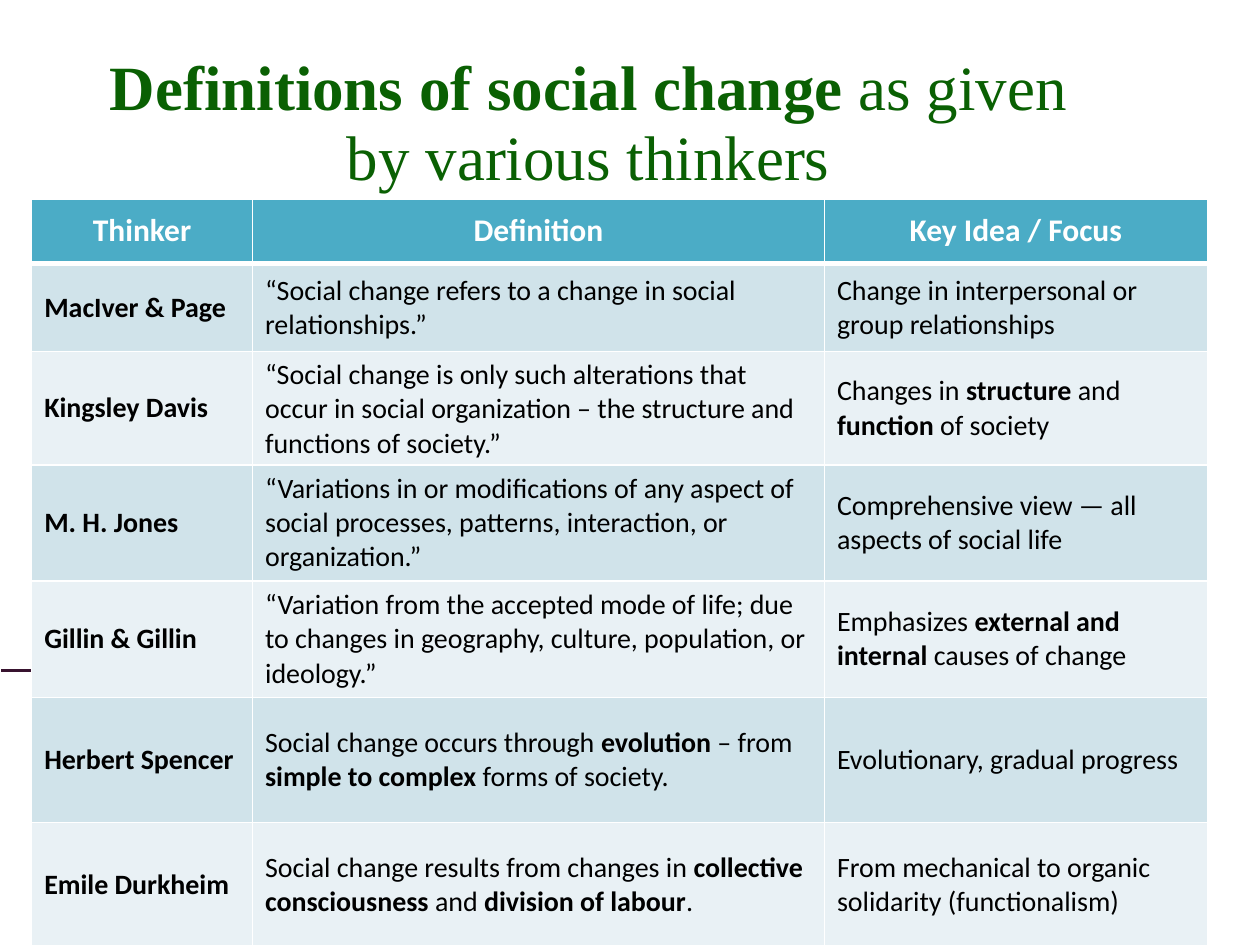
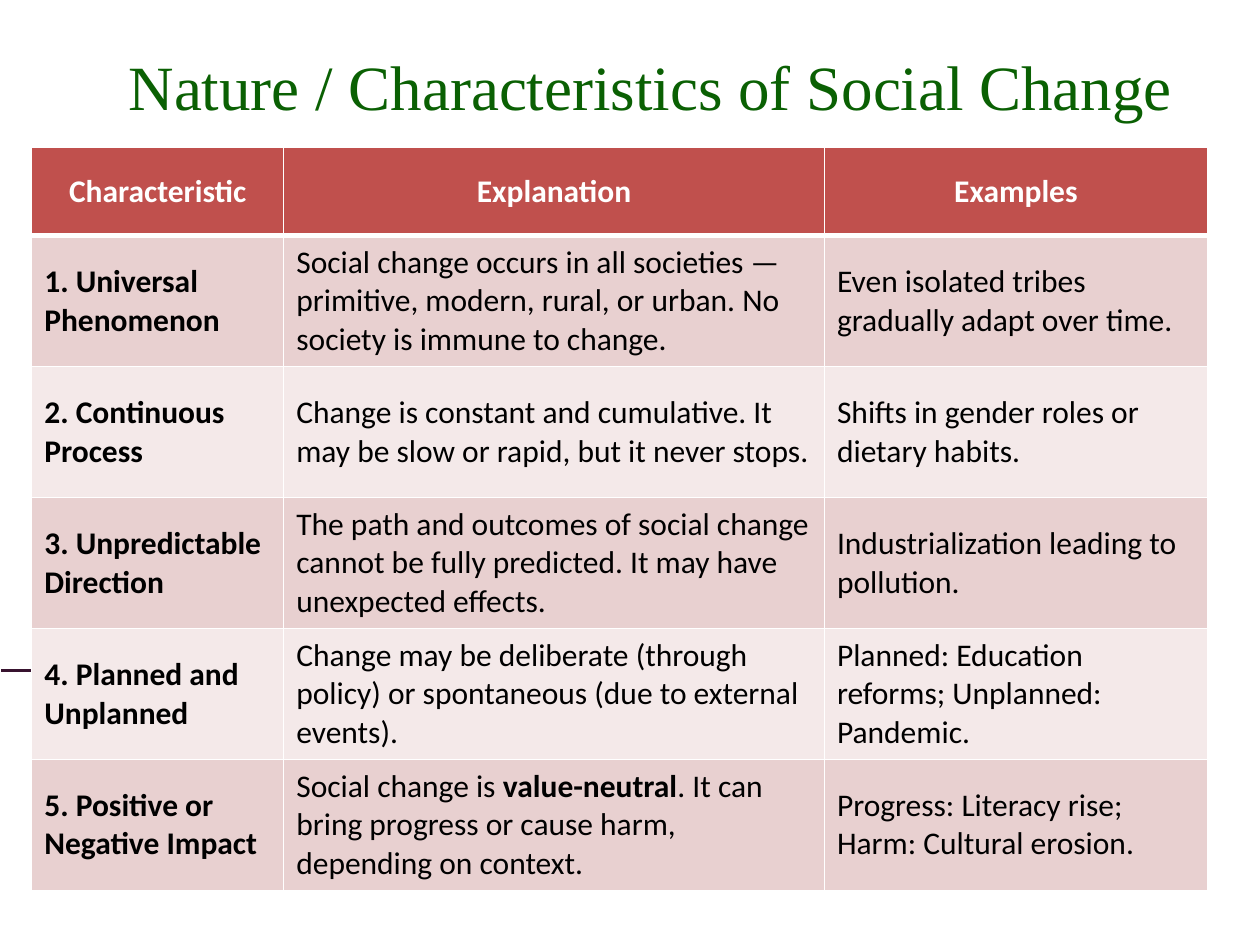
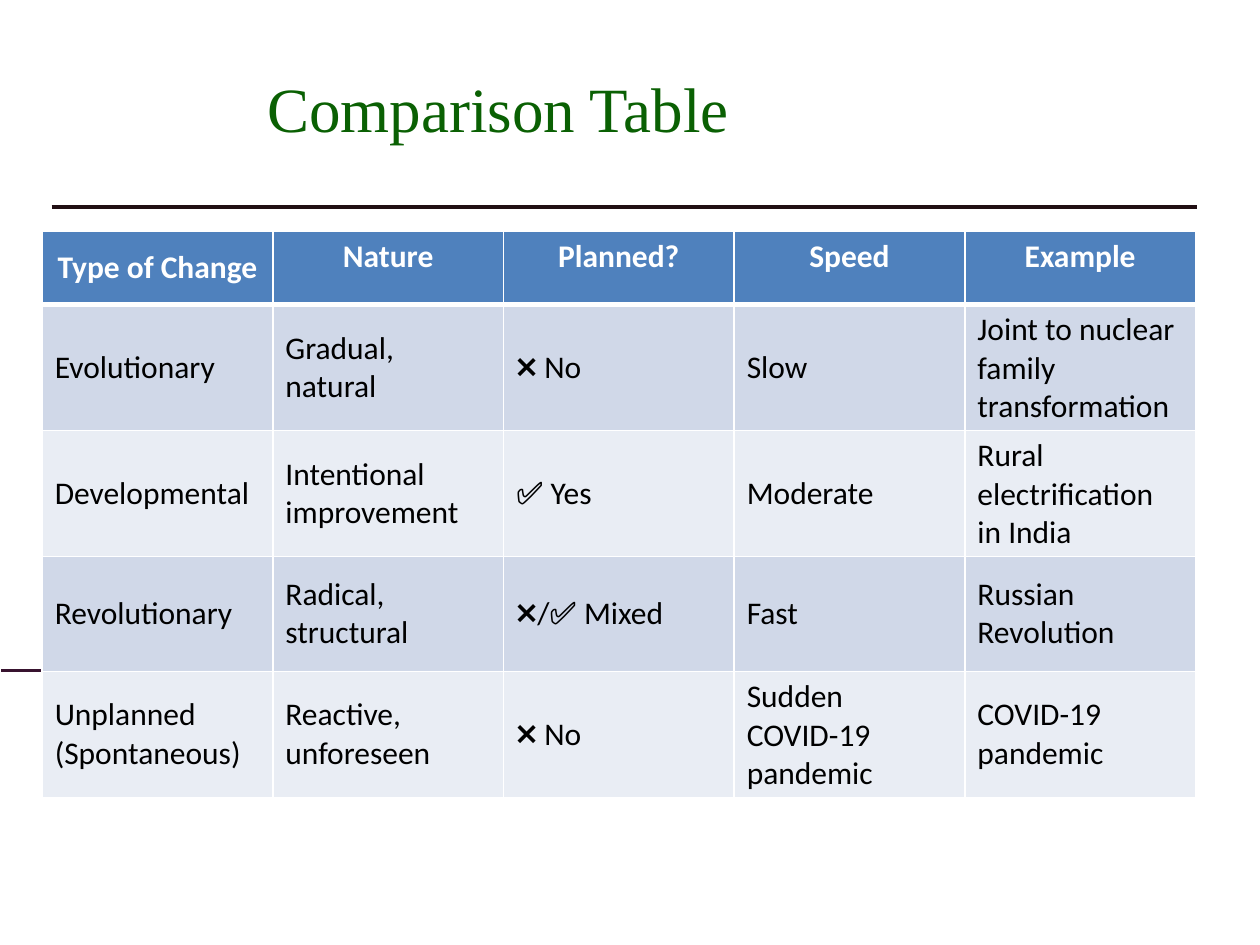
from lxml.etree import SubElement
from pptx import Presentation
from pptx.dml.color import RGBColor
from pptx.enum.shapes import MSO_CONNECTOR
from pptx.enum.text import MSO_ANCHOR, PP_ALIGN
from pptx.oxml import parse_xml
from pptx.oxml.ns import nsdecls, qn
from pptx.util import Cm, Pt

GREEN = RGBColor(0x0A, 0x60, 0x03)
PLUM = RGBColor(0x38, 0x13, 0x2F)
DARK = RGBColor(0x21, 0x0F, 0x13)
WHITE = RGBColor(0xFF, 0xFF, 0xFF)
BLACK = RGBColor(0, 0, 0)
TEAL = (RGBColor(0x4B, 0xAC, 0xC6), RGBColor(0xD0, 0xE3, 0xEA), RGBColor(0xE9, 0xF1, 0xF5))
RED = (RGBColor(0xC0, 0x50, 0x4D), RGBColor(0xE8, 0xD0, 0xD0), RGBColor(0xF4, 0xE9, 0xE9))
BLUE = (RGBColor(0x4F, 0x81, 0xBD), RGBColor(0xD0, 0xD8, 0xE8), RGBColor(0xE9, 0xED, 0xF4))

THINKERS = [
    ["Thinker", "Definition", "Key Idea / Focus"],
    ["**MacIver & Page**",
     "“Social change refers to a change in social relationships.”",
     "Change in interpersonal or group relationships"],
    ["**Kingsley Davis**",
     "“Social change is only such alterations that occur in social organization"
     " – the structure and functions of society.”",
     "Changes in **structure** and **function** of society"],
    ["**M. H. Jones**",
     "“Variations in or modifications of any aspect of social processes,"
     " patterns, interaction, or organization.”",
     "Comprehensive view — all aspects of social life"],
    ["**Gillin & Gillin**",
     "“Variation from the accepted mode of life; due to changes in geography,"
     " culture, population, or ideology.”",
     "Emphasizes **external and internal** causes of change"],
    ["**Herbert Spencer**",
     "Social change occurs through **evolution** – from **simple to complex**"
     " forms of society.",
     "Evolutionary, gradual progress"],
    ["**Emile Durkheim**",
     "Social change results from changes in **collective consciousness** and"
     " **division of labour**.",
     "From mechanical to organic solidarity (functionalism)"],
]
TRAITS = [
    ["Characteristic", "Explanation", "Examples"],
    ["**1. Universal Phenomenon**",
     "Social change occurs in all societies — primitive, modern, rural, or urban."
     " No society is immune to change.",
     "Even isolated tribes gradually adapt over time."],
    ["**2. Continuous Process**",
     "Change is constant and cumulative. It may be slow or rapid, but it never stops.",
     "Shifts in gender roles or dietary habits."],
    ["**3. Unpredictable Direction**",
     "The path and outcomes of social change cannot be fully predicted."
     " It may have unexpected effects.",
     "Industrialization leading to pollution."],
    ["**4. Planned and Unplanned**",
     "Change may be deliberate (through policy) or spontaneous (due to external events).",
     "Planned: Education reforms; Unplanned: Pandemic."],
    ["**5. Positive or Negative Impact**",
     "Social change is **value-neutral**. It can bring progress or cause harm,"
     " depending on context.",
     "Progress: Literacy rise; Harm: Cultural erosion."],
]
TYPES = [
    ["Type of Change", "Nature", "Planned?", "Speed", "Example"],
    ["Evolutionary", "Gradual, natural", "❌ No", "Slow",
     "Joint to nuclear family transformation"],
    ["Developmental", "Intentional improvement", "✅ Yes", "Moderate",
     "Rural electrification in India"],
    ["Revolutionary", "Radical, structural", "❌/✅ Mixed", "Fast", "Russian Revolution"],
    ["Unplanned (Spontaneous)", "Reactive, unforeseen", "❌ No",
     "Sudden\tCOVID-19 pandemic", "COVID-19 pandemic"],
]


def fill_text(para, text, size, face, color, bold=False):
    """Write text into a paragraph, with **marked** parts in bold."""
    font = para.font
    font.size, font.name, font.bold = Pt(size), face, bold
    font.color.rgb = color
    for i, part in enumerate(text.split("**")):
        if part:
            run = para.add_run()
            run.text = part
            if i % 2:
                run.font.bold = True


def add_rule(slide, left, top, width, color, weight):
    """Draw a level line."""
    line = slide.shapes.add_connector(
        MSO_CONNECTOR.STRAIGHT, Cm(left), Cm(top), Cm(left + width), Cm(top))
    line.line.color.rgb = color
    line.line.width = Pt(weight)
    SubElement(line._element.spPr, qn("a:effectLst"))


def add_title(slide, box, text, inset=(0, 0.05), align=PP_ALIGN.CENTER):
    """Place the green title in its box."""
    frame = slide.shapes.add_textbox(*map(Cm, box)).text_frame
    frame.word_wrap = True
    frame.margin_left, frame.margin_top = map(Cm, inset)
    frame.margin_right = frame.margin_bottom = 0
    para = frame.paragraphs[0]
    para.alignment = align
    para.line_spacing = Pt(39.6)
    fill_text(para, text, 36, "Times New Roman", GREEN)


def add_edges(cell, base):
    """Give a cell white edges, with its own weight at the base."""
    props = cell._tc.get_or_add_tcPr()
    for i, (side, weight) in enumerate((("lnL", 1), ("lnR", 1), ("lnB", base))):
        props.insert(i, parse_xml(
            f'<a:{side} {nsdecls("a")} w="{Pt(weight)}"><a:solidFill>'
            f'<a:srgbClr val="{WHITE}"/></a:solidFill></a:{side}>'))


def add_grid(slide, left, top, widths, heights, rows, hues, size=18,
             head=MSO_ANCHOR.MIDDLE):
    """Build a banded table with a coloured head row."""
    grid = slide.shapes.add_table(
        len(rows), len(widths), Cm(left), Cm(top),
        Cm(sum(widths)), Cm(sum(heights))).table
    grid.first_row = grid.horz_banding = False
    for col, width in zip(grid.columns, widths):
        col.width = Cm(width)
    for r, (row, height) in enumerate(zip(rows, heights)):
        grid.rows[r].height = Cm(height)
        for c, text in enumerate(row):
            cell = grid.cell(r, c)
            cell.vertical_anchor = MSO_ANCHOR.MIDDLE if r or not c else head
            cell.fill.solid()
            cell.fill.fore_color.rgb = hues[2 - r % 2 if r else 0]
            add_edges(cell, 1 if r else 3)
            para = cell.text_frame.paragraphs[0]
            if r:
                fill_text(para, text, size, "Calibri", BLACK)
            else:
                para.alignment = PP_ALIGN.CENTER
                fill_text(para, text, 18, "Calibri", WHITE, True)


def add_page(deck):
    """Add a blank slide with the tick at its left edge."""
    slide = deck.slides.add_slide(deck.slide_layouts[6])
    add_rule(slide, 0.03, 13.51, 1.67, PLUM, 1.64)
    return slide


def show_thinkers(deck):
    """Build the slide of definitions."""
    slide = add_page(deck)
    add_title(slide, (2.11, 1.04, 19.5, 2.9),
              "**Definitions of social change** as given by various thinkers")
    add_grid(slide, 0.64, 4.01, [4.45, 11.53, 7.72],
             [1.3, 1.78, 1.63, 2.34, 2.34, 2.52, 2.52], THINKERS, TEAL, 16)


def show_traits(deck):
    """Build the slide of characteristics."""
    slide = add_page(deck)
    add_title(slide, (2.11, 1.04, 22.02, 1.47),
              "Nature / Characteristics of Social Change")
    add_grid(slide, 0.64, 2.97, [5.08, 10.9, 7.72], [1.78] + [2.64] * 5, TRAITS, RED)


def show_types(deck):
    """Build the slide that compares types of change."""
    slide = add_page(deck)
    add_rule(slide, 1.04, 4.17, 23.09, DARK, 2.11)
    add_title(slide, (2.9, 0.2, 20.75, 2.9), "Comparison Table",
              (2.49, 1.32), PP_ALIGN.LEFT)
    add_grid(slide, 0.85, 4.66, [4.65] * 5, [1.48] + [2.31] * 4, TYPES, BLUE,
             head=MSO_ANCHOR.TOP)


def main():
    """Build and save the deck."""
    deck = Presentation()
    deck.slide_width, deck.slide_height = Cm(25.4), Cm(19.05)
    for show in (show_thinkers, show_traits, show_types):
        show(deck)
    deck.save("out.pptx")


if __name__ == "__main__":
    main()
